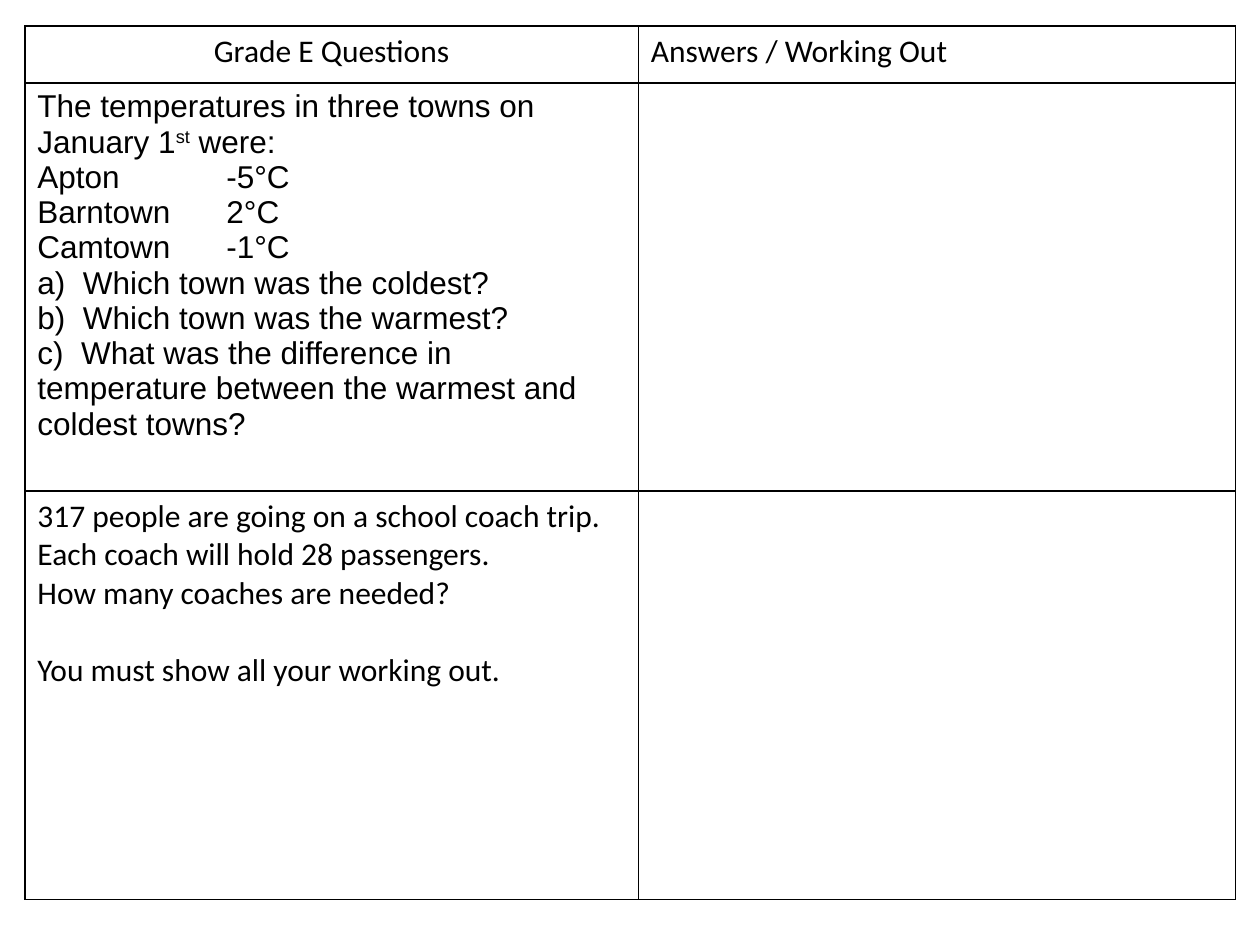
from dataclasses import dataclass

from lxml import etree
from pptx import Presentation
from pptx.dml.color import RGBColor
from pptx.enum.text import PP_ALIGN
from pptx.oxml.ns import qn
from pptx.util import Pt

CENTER, LEFT = PP_ALIGN.CENTER, PP_ALIGN.LEFT


@dataclass(frozen=True)
class Theme:
    ink: str = "000000"
    paper: str = "FFFFFF"
    body: str = "Calibri"
    question: str = "Arial"
    size: float = 18
    border: float = 1
    line_gap: float = 22


THEME = Theme()

# Each paragraph is a list of (text, is_superscript) runs.
TEMPERATURES = [
    [("The temperatures in three towns on January 1", False),
     ("st", True), (" were:", False)],
    [("Apton\t\t-5°C", False)],
    [("Barntown\t2°C", False)],
    [("Camtown\t-1°C", False)],
    [("a)  Which town was the coldest?", False)],
    [("b)  Which town was the warmest?", False)],
    [("c)  What was the difference in temperature between "
      "the warmest and coldest towns?", False)],
]
COACHES = [
    [("317 people are going on a school coach trip. "
      "Each coach will hold 28 passengers.", False)],
    [("How many coaches are needed?", False)],
    [("You must show all your working out.", False)],
]


def style_cell(cell):
    """Give the cell a plain fill and a border on all four sides."""
    tc_pr = cell._tc.get_or_add_tcPr()
    for side in ("lnL", "lnR", "lnT", "lnB"):
        ln = etree.SubElement(tc_pr, qn(f"a:{side}"), w=str(Pt(THEME.border)))
        fill = etree.SubElement(ln, qn("a:solidFill"))
        etree.SubElement(fill, qn("a:srgbClr"), val=THEME.ink)
    cell.fill.solid()
    cell.fill.fore_color.rgb = RGBColor.from_string(THEME.paper)


def write_cell(cell, paragraphs, font, align=LEFT):
    tf = cell.text_frame
    font_format = {"name": font, "size": Pt(THEME.size), "bold": False}
    for i, runs in enumerate(paragraphs):
        p = tf.add_paragraph() if i else tf.paragraphs[0]
        p.alignment = align
        for text, superscript in runs:
            r = p.add_run()
            r.text = text
            for name, value in font_format.items():
                setattr(r.font, name, value)
            r.font.color.rgb = RGBColor.from_string(THEME.ink)
            if superscript:
                r._r.get_or_add_rPr().set("baseline", "30000")


def add_worksheet(slide, left, top, width, height):
    """Place the question and answer table in the given box."""
    header_height, question_width = 32.4, 350.6
    question_height = (height - header_height) / 2
    table = slide.shapes.add_table(
        3, 2, Pt(left), Pt(top), Pt(width), Pt(height)).table
    table.first_row = table.horz_banding = False
    for column, w in zip(table.columns, (question_width, width - question_width)):
        column.width = Pt(w)
    for row, h in zip(table.rows, (header_height, question_height, question_height)):
        row.height = Pt(h)
    for cell in table.iter_cells():
        style_cell(cell)

    write_cell(table.cell(0, 0), [[("Grade E Questions", False)]], THEME.body, CENTER)
    write_cell(table.cell(0, 1), [[("Answers / Working Out", False)]], THEME.body)
    write_cell(table.cell(1, 0), TEMPERATURES, THEME.question)
    write_cell(table.cell(2, 0), COACHES, THEME.body)
    table.cell(2, 0).text_frame.paragraphs[-1].space_before = Pt(THEME.line_gap)


def main():
    prs = Presentation()
    prs.slide_width, prs.slide_height = Pt(720), Pt(540)
    slide = prs.slides.add_slide(prs.slide_layouts[6])
    add_worksheet(slide, 14.2, 15, 691.9, 499)
    prs.save("out.pptx")


if __name__ == "__main__":
    main()
